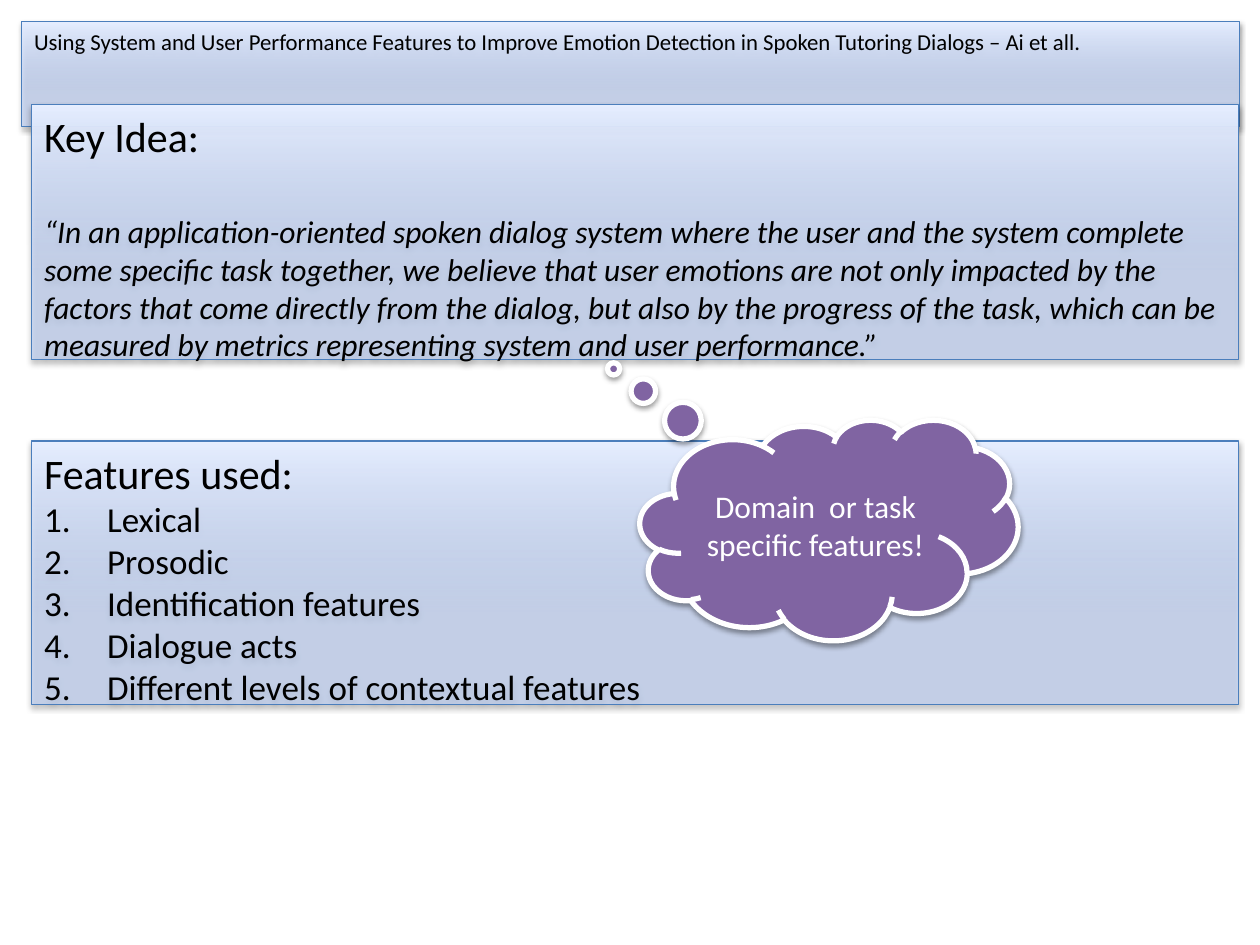
import lxml.etree
import pptx
import pptx.dml.color
import pptx.enum.shapes
import pptx.enum.text
import pptx.oxml.ns
import pptx.util

COLORS = {"text": "000000", "light": "E6EEFF", "panel": "BFD4FF", "border": "4B7EBC",
          "cloud": "8064A2", "white": "FFFFFF", "shadow": "000000"}
qn = pptx.oxml.ns.qn
rgb = {name: pptx.dml.color.RGBColor.from_string(value) for name, value in COLORS.items()}
ALIGN = pptx.enum.text.PP_ALIGN
ANCHOR = pptx.enum.text.MSO_ANCHOR

deck = pptx.Presentation()
deck.slide_width = pptx.util.Inches(10)
deck.slide_height = pptx.util.Inches(7.5)
page = deck.slides.add_slide(deck.slide_layouts[3])
heading, key_idea, features = page.placeholders


def write(para, text, size=18, color="text", italic=False, align=ALIGN.LEFT,
          before=0, numbered=False):
    """Put formatted text in a paragraph, numbered or without a bullet."""
    para.alignment = align
    para.space_before = pptx.util.Pt(before)
    props = para._p.get_or_add_pPr()
    indent = pptx.util.Inches(0.5) if numbered else 0
    props.set("marL", str(indent))
    props.set("indent", str(-indent))
    if numbered:
        lxml.etree.SubElement(props, qn("a:buAutoNum"), type="arabicPeriod")
    else:
        lxml.etree.SubElement(props, qn("a:buNone"))
    span = para.add_run()
    span.text = text
    span.font.name = "Calibri"
    span.font.size = pptx.util.Pt(size)
    span.font.italic = italic
    span.font.color.rgb = rgb[color]


def style_box(box, area, border, width, anchor):
    """Place a box and give it a line, a soft shadow and wrapped text."""
    box.left, box.top, box.width, box.height = map(pptx.util.Inches, area)
    box.line.color.rgb = rgb[border]
    box.line.width = pptx.util.Pt(width)
    box.shadow.inherit = False
    effects = box._element.spPr.find(qn("a:effectLst"))
    shadow = lxml.etree.SubElement(effects, qn("a:outerShdw"), blurRad="40000",
                                   dist="20000", dir="5400000", rotWithShape="0")
    color = lxml.etree.SubElement(shadow, qn("a:srgbClr"), val=COLORS["shadow"])
    lxml.etree.SubElement(color, qn("a:alpha"), val="38000")
    box.text_frame.word_wrap = True
    box.text_frame.vertical_anchor = anchor


# Gradient panels
panels = [(heading, (0.17, 0.17, 9.67, 0.32)),
          (key_idea, (0.25, 0.83, 9.58, 2.12)),
          (features, (0.25, 3.5, 9.58, 2.19))]
for panel, area in panels:
    panel.fill.gradient()
    panel.fill.gradient_angle = 90
    lower, upper = panel.fill.gradient_stops
    lower.position, lower.color.rgb = 0.35, rgb["panel"]
    upper.position, upper.color.rgb = 1, rgb["light"]
    lower_color = next(panel._element.spPr.iter(qn("a:srgbClr")))
    lxml.etree.SubElement(lower_color, qn("a:alpha"), val="56000")
    style_box(panel, area, "border", 0.75, ANCHOR.TOP)
    panel.text_frame.auto_size = pptx.enum.text.MSO_AUTO_SIZE.SHAPE_TO_FIT_TEXT

# Heading
write(heading.text_frame.paragraphs[0],
      "Using System and User Performance Features to Improve Emotion Detection "
      "in Spoken Tutoring Dialogs – Ai et all.", size=13)

# Key idea and quotation
write(key_idea.text_frame.paragraphs[0], "Key Idea:", size=24)
write(key_idea.text_frame.add_paragraph(),
      "“In an application-oriented spoken dialog system where the user and the system "
      "complete some specific task together, we believe that user emotions are not only "
      "impacted by the factors that come directly from the dialog, but also by the "
      "progress of the task, which can be measured by metrics representing system and "
      "user performance.”", italic=True, before=29)

# Numbered features
write(features.text_frame.paragraphs[0], "Features used:", size=24)
for feature in ("Lexical", "Prosodic", "Identification features", "Dialogue acts",
                "Different levels of contextual features"):
    write(features.text_frame.add_paragraph(), feature, size=20, numbered=True)

# Thought cloud pointing at the quotation
cloud_area = (5.08, 3.33, 3, 1.75)
cloud = page.shapes.add_shape(pptx.enum.shapes.MSO_SHAPE.CLOUD_CALLOUT,
                              *map(pptx.util.Inches, cloud_area))
cloud.adjustments[0], cloud.adjustments[1] = -0.57, -0.73
cloud.fill.solid()
cloud.fill.fore_color.rgb = rgb["cloud"]
style_box(cloud, cloud_area, "white", 3, ANCHOR.MIDDLE)
write(cloud.text_frame.paragraphs[0], "Domain  or task specific features!",
      color="white", align=ALIGN.CENTER)

deck.save("out.pptx")
